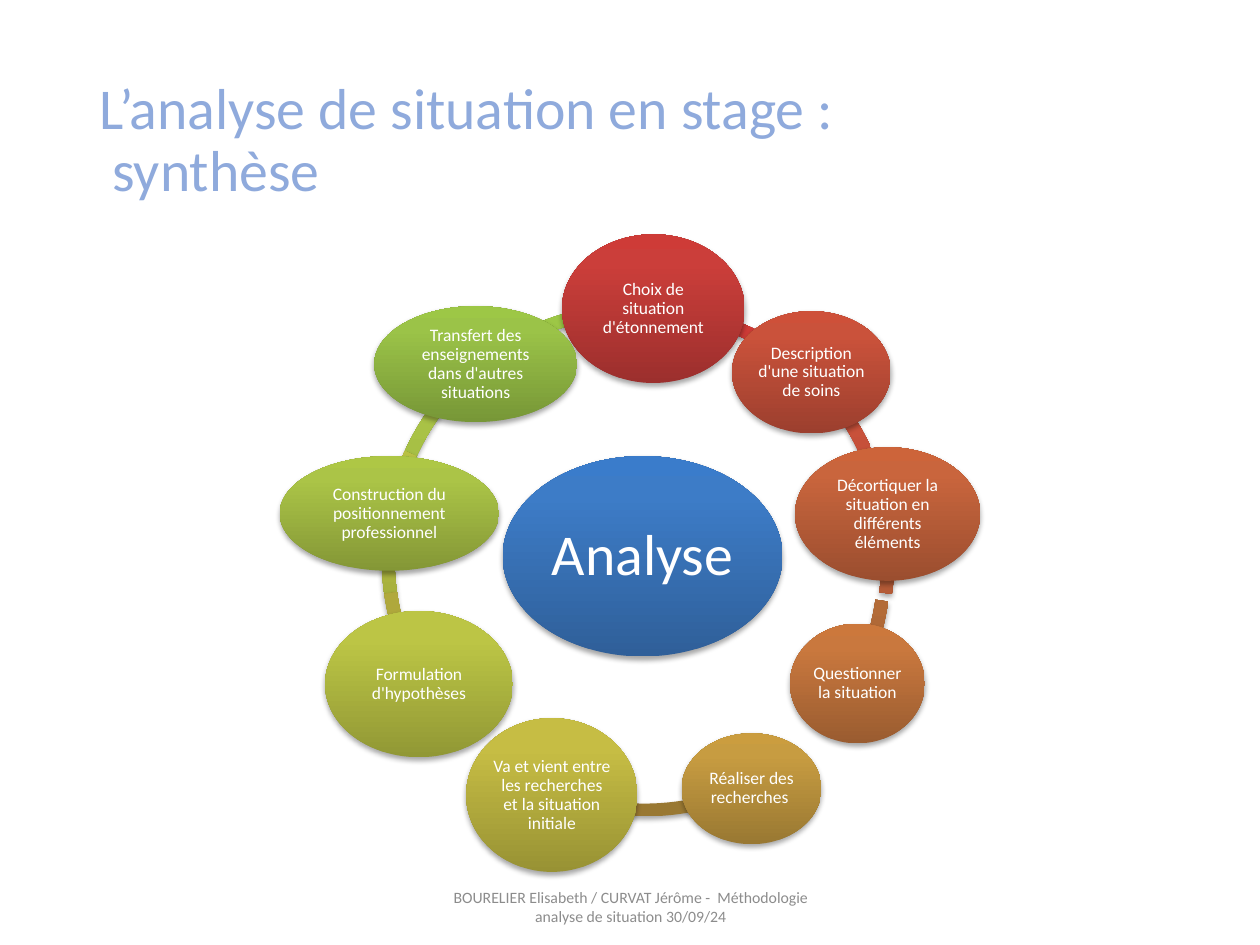
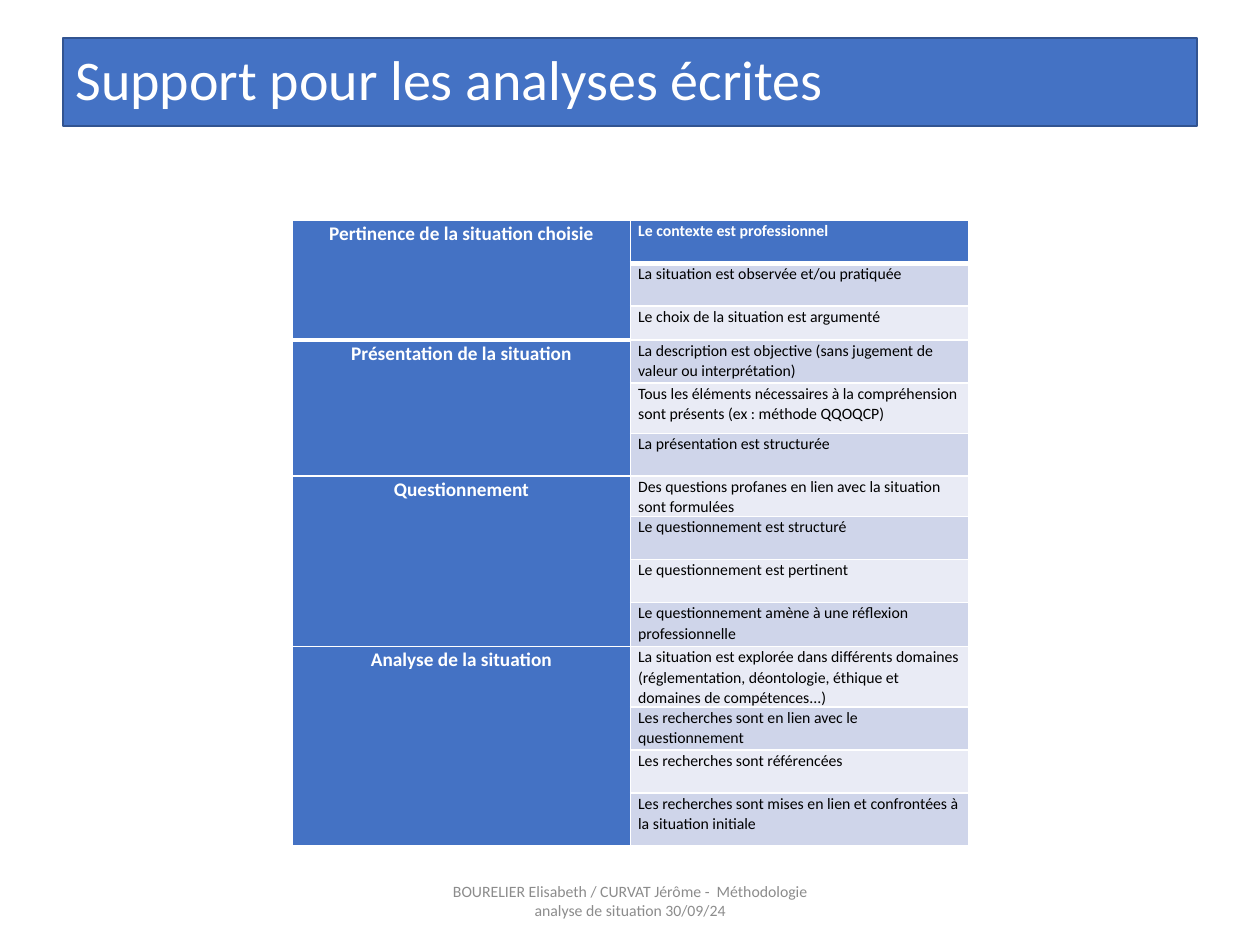
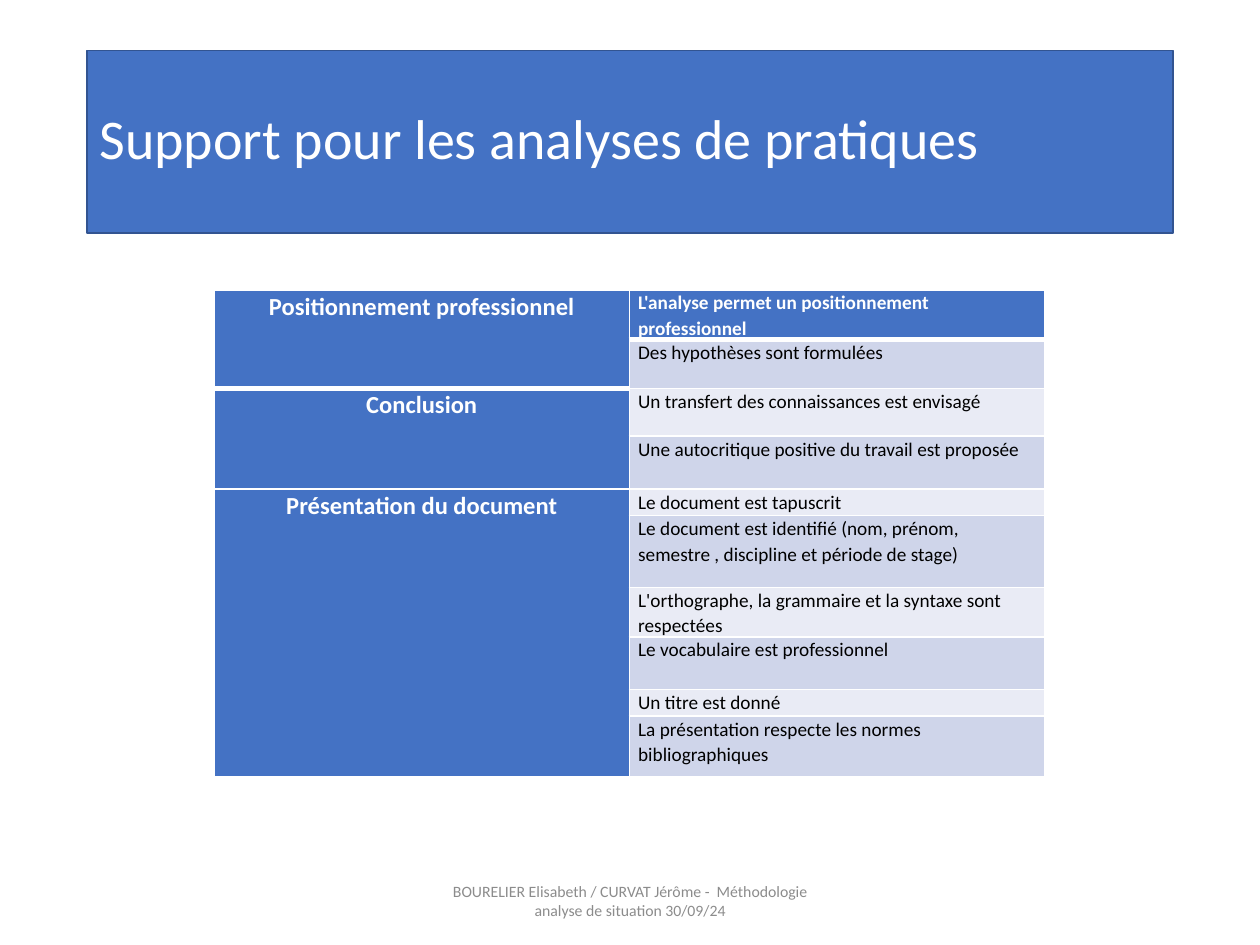
"""Builds three slides on the analysis of a work situation: a cycle and two criteria tables."""
from copy import deepcopy

from lxml import etree
from pptx import Presentation
from pptx import util as u
from pptx.dml.color import RGBColor
from pptx.enum import shapes, text
from pptx.oxml import ns

WHITE = RGBColor(0xFF, 0xFF, 0xFF)
BLACK = RGBColor(0x00, 0x00, 0x00)
BLUE = RGBColor(0x44, 0x72, 0xC4)
EDGE = RGBColor(0x32, 0x54, 0x91)
PALE = RGBColor(0x8F, 0xAA, 0xDC)
GREY = RGBColor(0x8C, 0x8C, 0x8C)
BANDS = RGBColor(0xE9, 0xEB, 0xF5), RGBColor(0xCF, 0xD5, 0xEA)


def ramp(codes):
    return [RGBColor.from_string(code) for code in codes.split()]


CORE = ramp("2F5F99 3D7CC7 3A7CCB")
RED = ramp("9C2F2D CB3E3A CE3B37")
BRICK = ramp("9C3F2E CA523B CE5039")
RUST = ramp("9B4E2F C9653D CD643A")
ORANGE = ramp("9A5C30 C9783E CC783C")
GOLD = ramp("997832 C79C41 CB9D3F")
YELLOW = ramp("989234 C6BD44 C9C042")
LIME = ramp("919835 BCC545 BFC843")
LEAF = ramp("849736 ABC447 AEC745")
GREEN = ramp("779737 9BC348 9DC746")

FONT = "Calibri"
FOOT = "BOURELIER Elisabeth / CURVAT Jérôme -  Méthodologie analyse de situation 30/09/24"
FULL = 216
STEP = FULL / 11
TOP = FULL * 3 / 4
RING = 4.07

NODES = [
    ("Choix de situation d'étonnement", RED, (4.46, 1.86, 1.45, 1.18), 0, (3.07, 2.41)),
    ("Description d'une situation de soins", BRICK, (5.81, 2.47, 1.26, 0.97), 1, (3.03, 2.37)),
    ("Décortiquer la situation en différents éléments", RUST,
     (6.31, 3.55, 1.47, 1.06), 2, (3.03, 2.39)),
    ("Questionner la situation", ORANGE, (6.27, 4.95, 1.07, 0.95), 3, (3, 2.45)),
    ("Réaliser des recherches ", GOLD, (5.41, 5.82, 1.11, 0.88), 5, (3.08, 2.41)),
    ("Va et vient entre les recherches et la situation initiale", YELLOW,
     (3.7, 5.7, 1.36, 1.22), 7, (3.03, 2.39)),
    ("Formulation d'hypothèses", LIME, (2.58, 4.85, 1.49, 1.16), 8, (3.03, 2.39)),
    ("Construction du positionnement professionnel", LEAF,
     (2.22, 3.62, 1.74, 0.91), 9, (3.03, 2.39)),
    ("Transfert des enseignements dans d'autres situations", GREEN,
     (2.97, 2.43, 1.61, 0.92), 10, (3.01, 2.41)),
]

WRITTEN = [
    ("Pertinence de la situation choisie", [
        (0.34, "Le contexte est professionnel"),
        (0.34, "La situation est observée et/ou pratiquée"),
        (0.27, "Le choix de la situation est argumenté")]),
    ("Présentation de la situation", [
        (0.34, "La description est objective (sans jugement de valeur ou interprétation)"),
        (0.4, "Tous les éléments nécessaires à la compréhension sont présents "
              "(ex : méthode QQOQCP)"),
        (0.34, "La présentation est structurée")]),
    ("Questionnement", [
        (0.32, "Des questions profanes en lien avec la situation sont formulées"),
        (0.34, "Le questionnement est structuré"),
        (0.34, "Le questionnement est pertinent"),
        (0.35, "Le questionnement amène à une réflexion professionnelle")]),
    ("Analyse de la situation", [
        (0.48, "La situation est explorée dans différents domaines (réglementation, "
               "déontologie, éthique et domaines de compétences...)"),
        (0.34, "Les recherches sont en lien avec le questionnement"),
        (0.34, "Les recherches sont référencées"),
        (0.42, "Les recherches sont mises en lien et confrontées à la situation initiale")]),
]

PRACTICE = [
    ("Positionnement professionnel", [
        (0.38, "L'analyse permet un positionnement professionnel"),
        (0.39, "Des hypothèses sont formulées")]),
    ("Conclusion", [
        (0.38, "Un transfert des connaissances est envisagé"),
        (0.42, "Une autocritique positive du travail est proposée")]),
    ("Présentation du document", [
        (0.21, "Le document est tapuscrit"),
        (0.57, "Le document est identifié (nom, prénom, semestre , discipline "
               "et période de stage)"),
        (0.39, "L'orthographe, la grammaire et la syntaxe sont respectées"),
        (0.42, "Le vocabulaire est professionnel"),
        (0.21, "Un titre est donné"),
        (0.48, "La présentation respecte les normes bibliographiques")]),
]


def inches(box):
    return [u.Inches(n) for n in box]


class Deck:
    def __init__(self):
        self.prs = Presentation()
        self.prs.slide_width, self.prs.slide_height = inches((10, 7.5))
        self.slide = None

    def page(self):
        self.slide = self.prs.slides.add_slide(self.prs.slide_layouts[6])

    def put(self, frame, words, size, color, bold=False, center=False, space=0.9):
        para = frame.paragraphs[0]
        para.text = words
        para.line_spacing = space
        para.alignment = text.PP_ALIGN.CENTER if center else text.PP_ALIGN.LEFT
        font = para.font
        font.name, font.size, font.bold = FONT, u.Pt(size), bold
        font.color.rgb = color

    def label(self, box, words, size, color, **style):
        frame = self.slide.shapes.add_textbox(*inches(box)).text_frame
        frame.word_wrap = True
        frame.vertical_anchor = text.MSO_ANCHOR.MIDDLE
        self.put(frame, words, size, color, **style)

    def foot(self, box=(3.31, 6.95, 3.38, 0.4)):
        self.label(box, FOOT, 9, GREY, center=True, space=1.0)

    def band(self, box, words):
        rect = self.slide.shapes.add_shape(shapes.MSO_SHAPE.RECTANGLE, *inches(box))
        rect.shadow.inherit = False
        rect.fill.solid()
        rect.fill.fore_color.rgb = BLUE
        rect.line.color.rgb = EDGE
        rect.line.width = u.Pt(1)
        rect.text_frame.word_wrap = True
        self.put(rect.text_frame, words, 32, WHITE)

    def glossy(self, kind, box, colors):
        shape = self.slide.shapes.add_shape(kind, *inches(box))
        shape.line.fill.background()
        shape.fill.gradient()
        shape.fill.gradient_angle = 90
        props = shape.element.spPr
        stops = props.find(".//" + ns.qn("a:gsLst"))
        stops.insert(1, deepcopy(stops[0]))
        for stop, place, color in zip(shape.fill.gradient_stops, (0, 0.8, 1), colors):
            stop.position = place
            stop.color.rgb = color
        shape.shadow.inherit = False
        glow = etree.SubElement(
            props.find(ns.qn("a:effectLst")), ns.qn("a:outerShdw"),
            blurRad=str(u.Pt(3.1)), dist=str(u.Pt(1.8)), dir="5400000", rotWithShape="0")
        tint = etree.SubElement(glow, ns.qn("a:srgbClr"), val=str(BLACK))
        etree.SubElement(tint, ns.qn("a:alpha"), val="35000")
        return shape

    def arc(self, spot, turn, colors):
        shape = self.glossy(shapes.MSO_SHAPE.BLOCK_ARC, (*spot, RING, RING), colors)
        start = TOP + turn * STEP
        for i, value in enumerate((start % FULL, (start + STEP) % FULL, 0.025)):
            shape.adjustments[i] = value

    def oval(self, box, words, colors, size=10, inset=0.01):
        shape = self.glossy(shapes.MSO_SHAPE.OVAL, box, colors)
        frame = shape.text_frame
        frame.word_wrap = True
        frame.margin_left = frame.margin_right = u.Inches(inset)
        frame.margin_top = frame.margin_bottom = u.Inches(inset)
        self.put(frame, words, size, WHITE, center=True)

    def cell(self, cell, words, size, fill, inset, head=False, center=False, base=1):
        cell.margin_left = cell.margin_right = u.Inches(inset)
        cell.margin_top = cell.margin_bottom = 0
        props = cell._tc.get_or_add_tcPr()
        for side in "LRTB":
            width = u.Pt(base if side == "B" else 1)
            line = etree.SubElement(props, ns.qn("a:ln" + side), w=str(width))
            paint = etree.SubElement(line, ns.qn("a:solidFill"))
            etree.SubElement(paint, ns.qn("a:srgbClr"), val=str(WHITE))
        cell.fill.solid()
        cell.fill.fore_color.rgb = fill
        self.put(cell.text_frame, words, size, WHITE if head else BLACK,
                 bold=head, center=center, space=1.07)

    def grid(self, box, groups, big, small, inset):
        rows = [(name if i == 0 else "", high, words, len(items), g == 0)
                for g, (name, items) in enumerate(groups)
                for i, (high, words) in enumerate(items)]
        table = self.slide.shapes.add_table(len(rows), 2, *inches(box)).table
        table.first_row = table.horz_banding = False
        for col in table.columns:
            col.width = u.Inches(box[2] / 2)
        for r, (name, high, words, span, first) in enumerate(rows):
            table.rows[r].height = u.Inches(high)
            left, right = table.cell(r, 0), table.cell(r, 1)
            self.cell(left, name, big, BLUE, inset, True, True, 3 if first else 1)
            self.cell(right, words, small, BANDS[r % 2] if r else BLUE, inset,
                      head=r == 0, base=1 if r else 3)
            if name:
                left.merge(table.cell(r + span - 1, 0))


def main():
    deck = Deck()
    deck.page()
    deck.label((0.69, 0.4, 8.62, 1.45), "L’analyse de situation en stage :\v synthèse", 33, PALE)
    for _, colors, _, turn, spot in reversed(NODES):
        deck.arc(spot, turn, colors)
    deck.oval((3.99, 3.62, 2.22, 1.59), "Analyse", CORE, 33, 0.05)
    for words, colors, box, _, _ in NODES:
        deck.oval(box, words, colors)
    deck.foot((3.42, 7, 3.17, 0.4))

    deck.page()
    deck.band((0.5, 0.3, 9, 0.7), "Support pour les analyses écrites")
    deck.grid((2.32, 1.75, 5.37, 4.95), WRITTEN, 11, 9, 0.06)
    deck.foot()

    deck.page()
    deck.band((0.69, 0.4, 8.62, 1.45), "Support pour les analyses de pratiques")
    deck.grid((1.7, 2.3, 6.59, 3.84), PRACTICE, 14, 11, 0.07)
    deck.foot()
    deck.prs.save("out.pptx")


if __name__ == "__main__":
    main()
